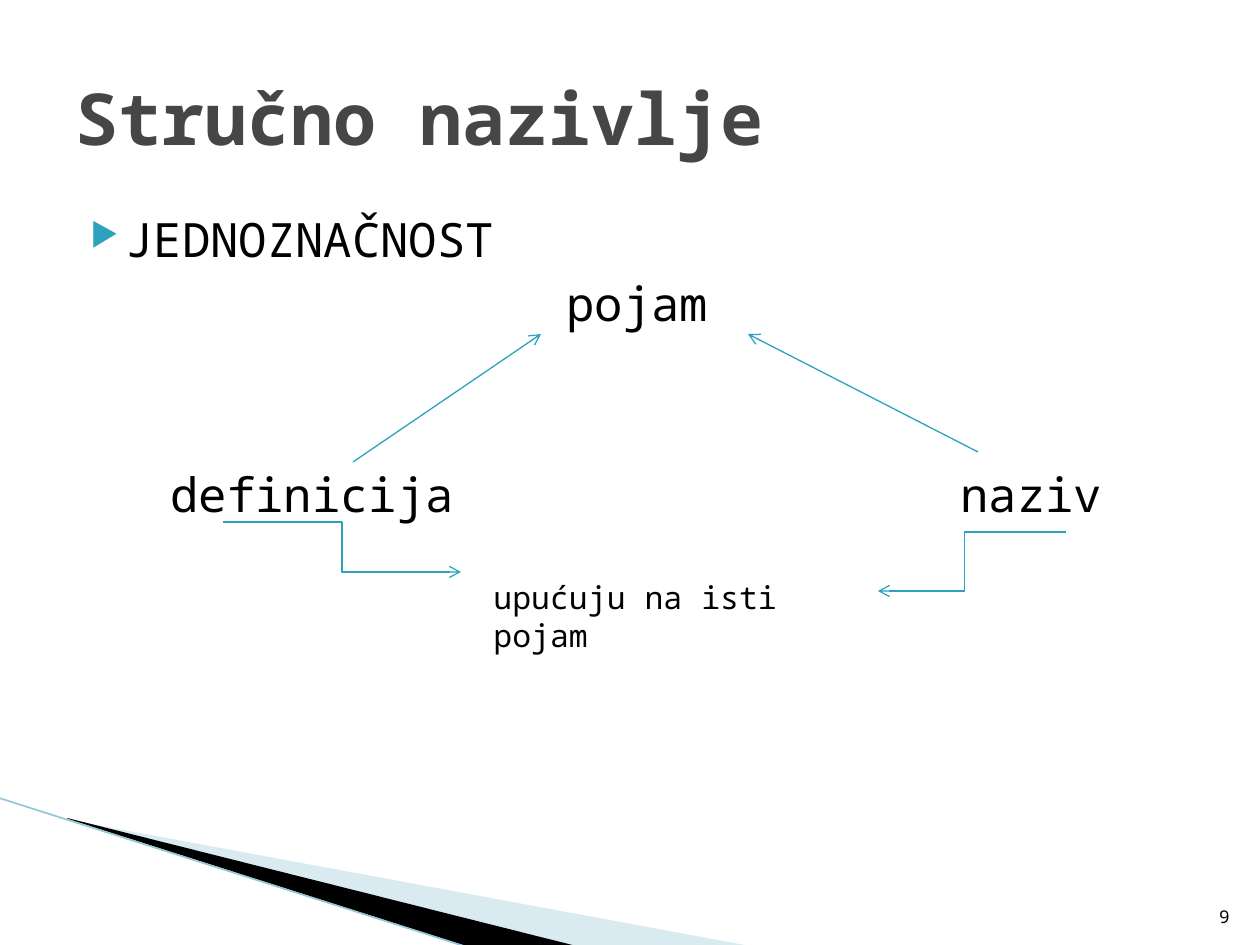
from lxml import etree
from pptx import Presentation
from pptx import util as u
from pptx.dml.color import RGBColor
from pptx.enum import shapes, text
from pptx.oxml import ns

PX = 914400 / 126
FONT = "Noto Sans Mono"
BLACK = RGBColor(0x00, 0x00, 0x00)
GREY = RGBColor(0x46, 0x46, 0x46)
TEAL = RGBColor(0x2D, 0xA2, 0xBF)
PALE_BLUE = RGBColor(0xA0, 0xCB, 0xDC)
EDGE_BLUE = RGBColor(0x97, 0xC5, 0xD8)

presentation = Presentation()
presentation.slide_width = u.Emu(round(1260 * PX))
presentation.slide_height = u.Emu(round(945 * PX))
slide = presentation.slides.add_slide(presentation.slide_layouts[6])


def add_text(box, lines, size, color=BLACK, bold=False):
    shape = slide.shapes.add_textbox(*(round(value * PX) for value in box))
    frame = shape.text_frame
    frame.word_wrap = True
    frame.text = "\n".join(lines)
    for paragraph in frame.paragraphs:
        for run in paragraph.runs:
            run.font.name = FONT
            run.font.size = u.Pt(size)
            run.font.bold = bold
            run.font.color.rgb = color
    return frame


def add_line(kind, ends, color, width, arrow=True):
    line = slide.shapes.add_connector(kind, *(round(value * PX) for value in ends))
    line.line.color.rgb = color
    line.line.width = u.Pt(width)
    if arrow:
        etree.SubElement(line.line._get_or_add_ln(), ns.qn("a:tailEnd"), type="arrow")
    etree.SubElement(line._element.spPr, ns.qn("a:effectLst"))
    return line


# Corner decoration
wedges = [
    ([(69, 820), (750, 946), (575, 946), (69, 819)], PALE_BLUE),
    ([(67, 818), (576, 946), (469, 947), (68, 819)], BLACK),
]
for points, color in wedges:
    builder = slide.shapes.build_freeform(*points[0], scale=PX)
    builder.add_line_segments(points[1:], close=True)
    wedge = builder.convert_to_shape()
    wedge.shadow.inherit = False
    wedge.fill.solid()
    wedge.fill.fore_color.rgb = color
    wedge.line.fill.background()
    if color == PALE_BLUE:
        fill_color = wedge._element.spPr.find(".//" + ns.qn("a:srgbClr"))
        etree.SubElement(fill_color, ns.qn("a:alpha"), val="40000")
add_line(shapes.MSO_CONNECTOR.STRAIGHT, (-1, 798, 467, 947), EDGE_BLUE, 0.95, arrow=False)

# Title and slide number
title = add_text((63, 38, 1134, 157), ["Stručno nazivlje"], 41, GREY, bold=True)
title.vertical_anchor = text.MSO_ANCHOR.MIDDLE
number = add_text((1192, 883, 50, 50), ["9"], 10)
number.vertical_anchor = text.MSO_ANCHOR.BOTTOM
number.paragraphs[0].alignment = text.PP_ALIGN.RIGHT

# Body: bulleted heading, centred concept, two tabbed terms
body = add_text((63, 204, 1134, 624),
                ["JEDNOZNAČNOST", "pojam", "\tdefinicija\tnaziv"], 27)
heading, concept, terms = body.paragraphs

heading_format = heading._p.get_or_add_pPr()
heading_format.set("marL", str(round(50 * PX)))
heading_format.set("indent", str(round(-35 * PX)))
bullet_color = etree.SubElement(heading_format, ns.qn("a:buClr"))
etree.SubElement(bullet_color, ns.qn("a:srgbClr"), val=str(TEAL))
etree.SubElement(heading_format, ns.qn("a:buSzPct"), val="68000")
etree.SubElement(heading_format, ns.qn("a:buChar"), char="▶")

concept.alignment = text.PP_ALIGN.CENTER
concept_format = concept._p.get_or_add_pPr()
concept_format.set("marL", str(round(50 * PX)))
concept_format.set("indent", str(round(-35 * PX)))
concept.space_before = u.Pt(4)

terms.space_before = u.Pt(77)
tabs = etree.SubElement(terms._p.get_or_add_pPr(), ns.qn("a:tabLst"))
for position in (95, 885):
    etree.SubElement(tabs, ns.qn("a:tab"), pos=str(round(position * PX)), algn="l")

# Arrows from both terms to the concept
for ends in [(353, 462, 541, 334), (978, 452, 748, 334)]:
    add_line(shapes.MSO_CONNECTOR.STRAIGHT, ends, TEAL, 0.75)

# Bent arrows from both terms to the remark
for ends, bend in [((223, 522, 461, 572), 50000), ((1066, 532, 878, 591), 54100)]:
    elbow = add_line(shapes.MSO_CONNECTOR.ELBOW, ends, TEAL, 0.75)
    geometry = elbow._element.spPr.find(ns.qn("a:prstGeom"))
    adjustments = geometry.find(ns.qn("a:avLst"))
    etree.SubElement(adjustments, ns.qn("a:gd"), name="adj1", fmla=f"val {bend}")

# Remark
add_text((481, 572, 387, 50), ["upućuju na isti pojam"], 18)

presentation.save("out.pptx")
